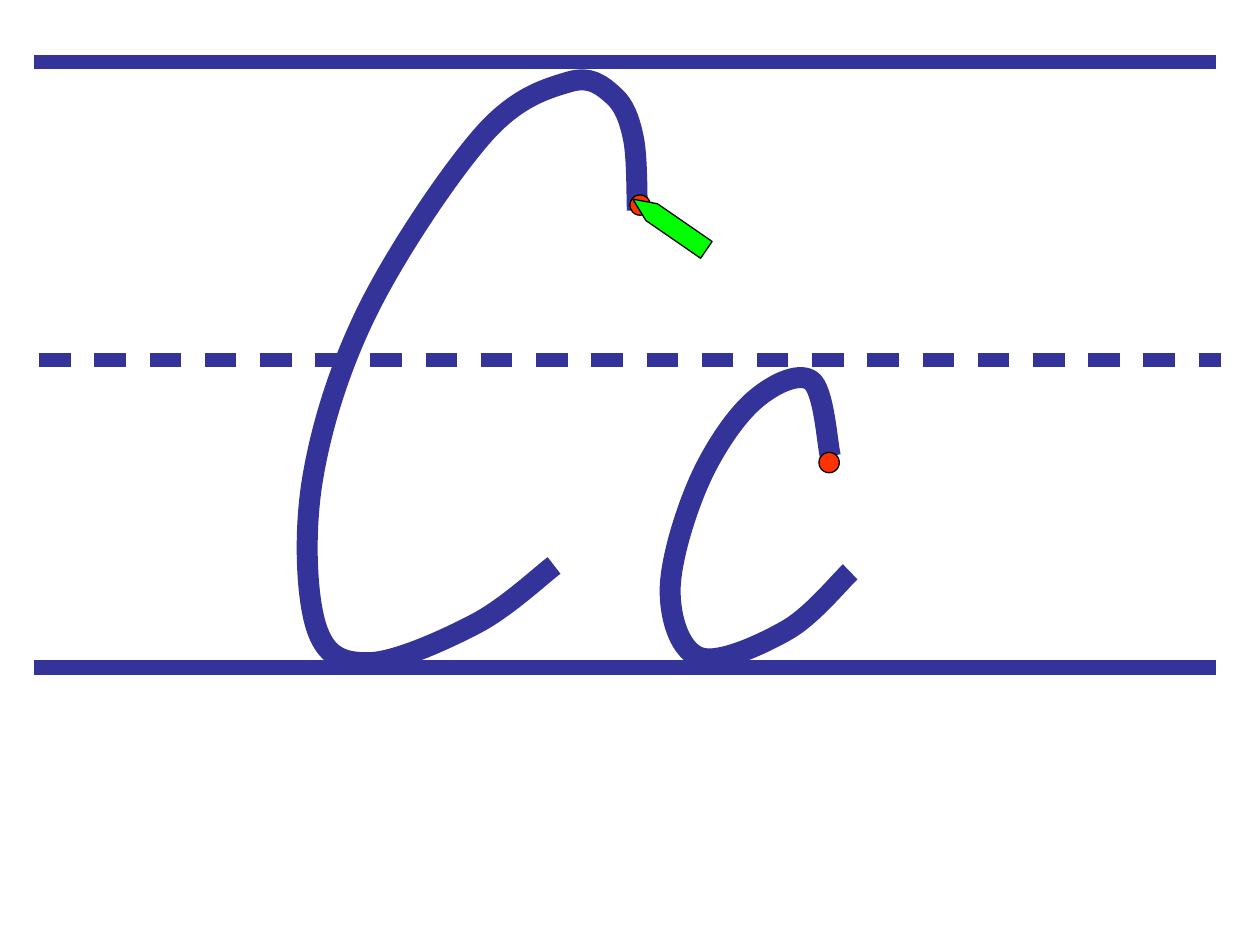
from lxml import etree
from pptx import Presentation
from pptx.dml.color import RGBColor
from pptx.enum.dml import MSO_LINE
from pptx.enum.shapes import MSO_CONNECTOR, MSO_SHAPE
from pptx.oxml.ns import qn
from pptx.util import Cm, Pt

DASH = MSO_LINE.DASH
STRAIGHT = MSO_CONNECTOR.STRAIGHT
DOT = MSO_SHAPE.FLOWCHART_CONNECTOR
PEN = MSO_SHAPE.PENTAGON

HUES = {"ink": "333399", "dot": "FF3300", "pen": "00FF00", "edge": "000000"}

BIG = [(5.05, 9.88), (3.48, 11.05), (1.32, 11.84), (0.25, 11.1),
       (0.18, 8.15), (1.3, 4.72), (3.63, 1.19), (5.36, 0.13),
       (6.25, 0.41), (6.65, 1.27), (6.73, 2.72)]
SMALL = [(3.63, 4.06), (2.36, 5.23), (0.61, 5.79), (0, 4.47),
         (0.56, 2.29), (1.65, 0.64), (2.84, 0.2), (3.23, 1.73)]


def hue(name):
    return RGBColor.from_string(HUES[name])


def set_line(line, name, width):
    line.color.rgb = hue(name)
    line.width = Pt(width)


def add_mark(shapes, kind, left, top, width, height, fill):
    mark = shapes.add_shape(kind, Cm(left), Cm(top), Cm(width), Cm(height))
    mark.shadow.inherit = False
    mark.fill.solid()
    mark.fill.fore_color.rgb = hue(fill)
    set_line(mark.line, "edge", 0.75)
    return mark


def add_point(node, spot):
    x, y = (str(Cm(n)) for n in spot)
    etree.SubElement(node, qn("a:pt"), x=x, y=y)


def lean(spot, start, end):
    return [n + (b - a) / 6 for n, a, b in zip(spot, start, end)]


def add_curve(shapes, left, top, width, height, knots):
    pen = shapes.build_freeform(0, 0)
    pen.add_line_segments([(Cm(width), Cm(height))], close=False)
    curve = pen.convert_to_shape(Cm(left), Cm(top))
    track = next(curve._element.iter(qn("a:path")))
    for node in list(track):
        track.remove(node)
    add_point(etree.SubElement(track, qn("a:moveTo")), knots[0])
    ends = [knots[0], *knots, knots[-1]]
    for a, b, c, d in zip(ends, ends[1:], ends[2:], ends[3:]):
        bend = etree.SubElement(track, qn("a:cubicBezTo"))
        for spot in (lean(b, a, c), lean(c, d, b), c):
            add_point(bend, spot)
    curve.shadow.inherit = False
    curve.fill.background()
    set_line(curve.line, "ink", 12)


def add_rules(slide, left, top, width):
    shapes = slide.shapes.add_group_shape().shapes
    for drop, shift, dash in ((0, 0, None), (6, 0.1, DASH), (12.2, 0, None)):
        x, y = Cm(left + shift), Cm(top + drop)
        rule = shapes.add_connector(STRAIGHT, x, y, x + Cm(width), y)
        set_line(rule.line, "ink", 4.5)
        if dash:
            rule.line.dash_style = dash
        etree.SubElement(rule._element.spPr, qn("a:effectLst"))


def add_letter(slide, left, top, width, height, knots, dot):
    shapes = slide.shapes.add_group_shape().shapes
    add_curve(shapes, left, top, width, height, knots)
    add_mark(shapes, DOT, left + dot[0], top + dot[1], 0.41, 0.41, "dot")


def add_pen(slide, left, top, width, height):
    pen = add_mark(slide.shapes, PEN, left, top, width, height, "pen")
    pen.adjustments[0] = 1.12
    pen.rotation = 214.6


def main():
    deck = Presentation()
    deck.slide_width, deck.slide_height = Cm(25.4), Cm(19.05)
    slide = deck.slides.add_slide(deck.slide_layouts[6])
    for top in (1.32, 1.19):
        add_rules(slide, 0.69, top, 23.83)
    add_letter(slide, 6.12, 1.52, 6.76, 11.84, BIG, (6.58, 2.41))
    add_letter(slide, 13.51, 7.47, 3.63, 5.92, SMALL, (3, 1.65))
    add_pen(slide, 12.6, 4.32, 1.8, 0.41)
    deck.save("out.pptx")


if __name__ == "__main__":
    main()
